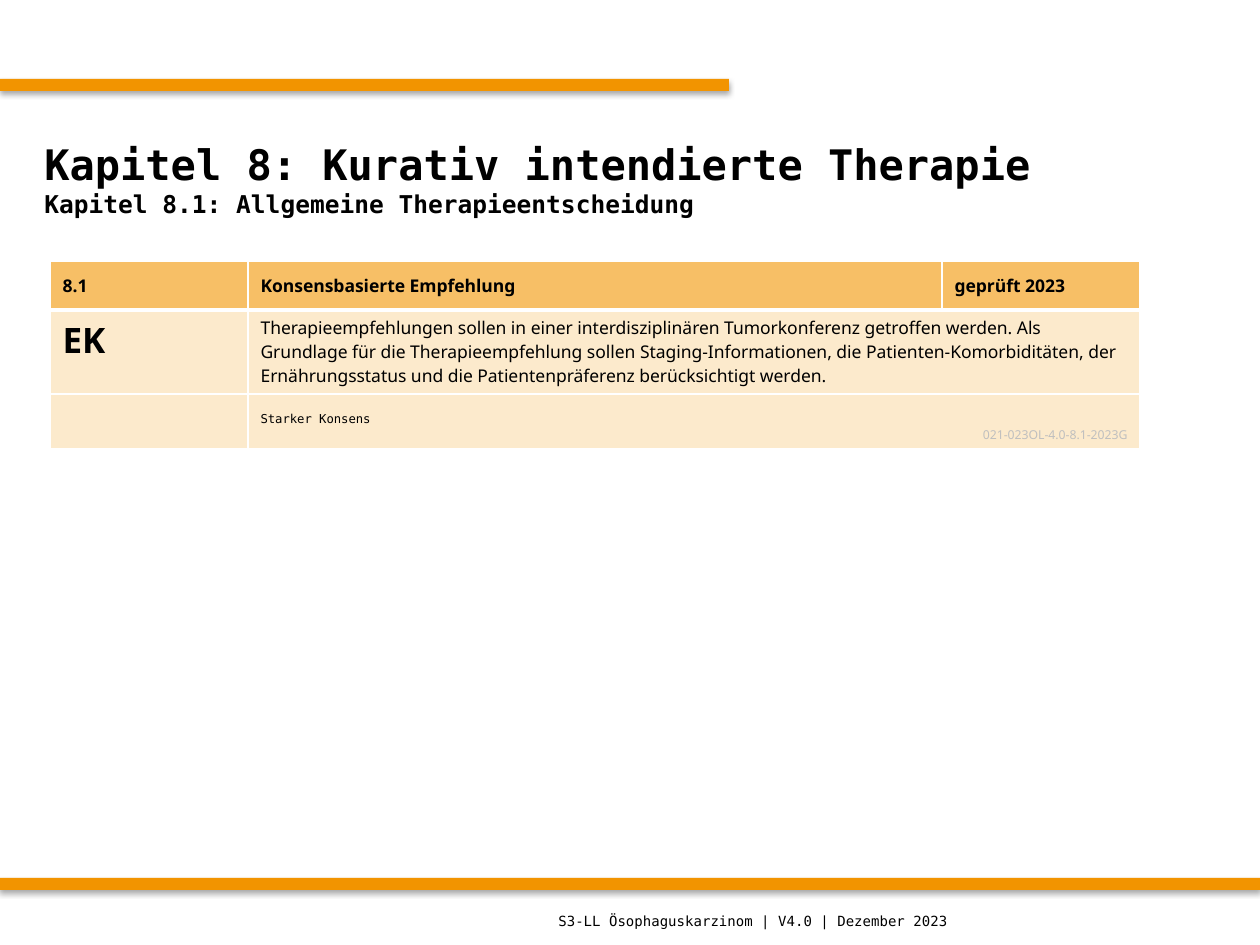
"""Build the slide on chapter 8.1, general therapy decision, with its recommendation table."""
from lxml.etree import SubElement
from pptx import Presentation
from pptx.dml.color import RGBColor as RGB
from pptx.enum.shapes import MSO_SHAPE as SHAPE
from pptx.enum.text import MSO_ANCHOR as ANCHOR, PP_ALIGN as ALIGN
from pptx.oxml import parse_xml
from pptx.oxml.ns import nsdecls, qn
from pptx.util import Pt

SCALE = 914400 / 126
MONO, SANS = "DejaVu Sans Mono", "Noto Sans"
COLORS = {
    "bar": "F29400", "head": "F7BF66", "body": "FCEACC",
    "text": "000000", "code": "BFBFBF", "rule": "FFFFFF",
}
SHADOW = (
    f'<a:effectLst {nsdecls("a")}><a:outerShdw blurRad="40000" dist="23000" dir="5400000" rotWithShape="0">'
    '<a:srgbClr val="000000"><a:alpha val="35000"/></a:srgbClr></a:outerShdw></a:effectLst>'
)


def px(*lengths):
    return [round(length * SCALE) for length in lengths]


def write(frame, lines, anchor):
    frame.word_wrap = True
    frame.vertical_anchor = anchor
    for index, (text, size, font, bold, color, align) in enumerate(lines):
        paragraph = frame.add_paragraph() if index else frame.paragraphs[0]
        paragraph.alignment = align
        run = paragraph.add_run()
        run.text = text
        run.font.size = Pt(size)
        run.font.name = font
        run.font.bold = bold
        run.font.color.rgb = RGB.from_string(COLORS[color])


deck = Presentation()
deck.slide_width, deck.slide_height = px(1260, 945)
slide = deck.slides.add_slide(deck.slide_layouts[6])
shapes = slide.shapes

for top, width in ((79, 729), (878, 1260)):
    bar = shapes.add_shape(SHAPE.RECTANGLE, *px(0, top, width, 12))
    bar.fill.solid()
    bar.fill.fore_color.rgb = RGB.from_string(COLORS["bar"])
    bar.line.fill.background()
    bar._element.spPr.append(parse_xml(SHADOW))

title = shapes.add_textbox(*px(32, 105, 1197, 147))
write(title.text_frame, [
    ("Kapitel 8: Kurativ intendierte Therapie", 24, MONO, True, "text", ALIGN.LEFT),
    ("Kapitel 8.1: Allgemeine Therapieentscheidung", 14, MONO, True, "text", ALIGN.LEFT),
], ANCHOR.MIDDLE)

widths, heights = (198, 694, 198), (49, 84, 55)
table = shapes.add_table(3, 3, *px(50, 261, sum(widths), sum(heights))).table
for column, width in zip(table.columns, px(*widths)):
    column.width = width
for row, height in zip(table.rows, px(*heights)):
    row.height = height
for row in (1, 2):
    table.cell(row, 1).merge(table.cell(row, 2))

for row in range(3):
    for column in range(3):
        cell = table.cell(row, column)
        properties = cell._tc.get_or_add_tcPr()
        thick_side = {0: "lnB", 1: "lnT"}.get(row)
        for side in ("lnL", "lnR", "lnT", "lnB"):
            border = SubElement(properties, qn(f"a:{side}"), w=str(Pt(3 if side == thick_side else 1)))
            SubElement(SubElement(border, qn("a:solidFill")), qn("a:srgbClr"), val=COLORS["rule"])
        cell.fill.solid()
        cell.fill.fore_color.rgb = RGB.from_string(COLORS["body" if row else "head"])

for column, heading in enumerate(("8.1", "Konsensbasierte Empfehlung", "geprüft 2023")):
    cell = table.cell(0, column)
    write(cell.text_frame, [(heading, 10, SANS, True, "text", ALIGN.LEFT)], ANCHOR.MIDDLE)
    cell.vertical_anchor = ANCHOR.MIDDLE

recommendation = (
    "Therapieempfehlungen sollen in einer interdisziplinären Tumorkonferenz getroffen werden. "
    "Als Grundlage für die Therapieempfehlung sollen Staging-Informationen, die Patienten-Komorbiditäten, "
    "der Ernährungsstatus und die Patientenpräferenz berücksichtigt werden."
)
for column, text, size, bold in ((0, "EK", 20, True), (1, recommendation, 10, False)):
    write(table.cell(1, column).text_frame, [(text, size, SANS, bold, "text", ALIGN.LEFT)], ANCHOR.TOP)

consensus = table.cell(2, 1)
write(consensus.text_frame, [
    ("Starker Konsens", 7, MONO, False, "text", ALIGN.LEFT),
    ("021-023OL-4.0-8.1-2023G", 7, SANS, False, "code", ALIGN.RIGHT),
], ANCHOR.BOTTOM)
consensus.vertical_anchor = ANCHOR.BOTTOM

footer = shapes.add_textbox(*px(546, 896, 694, 49))
write(footer.text_frame, [
    ("S3-LL Ösophaguskarzinom | V4.0 | Dezember 2023", 8, MONO, False, "text", ALIGN.LEFT),
], ANCHOR.MIDDLE)

deck.save("out.pptx")
